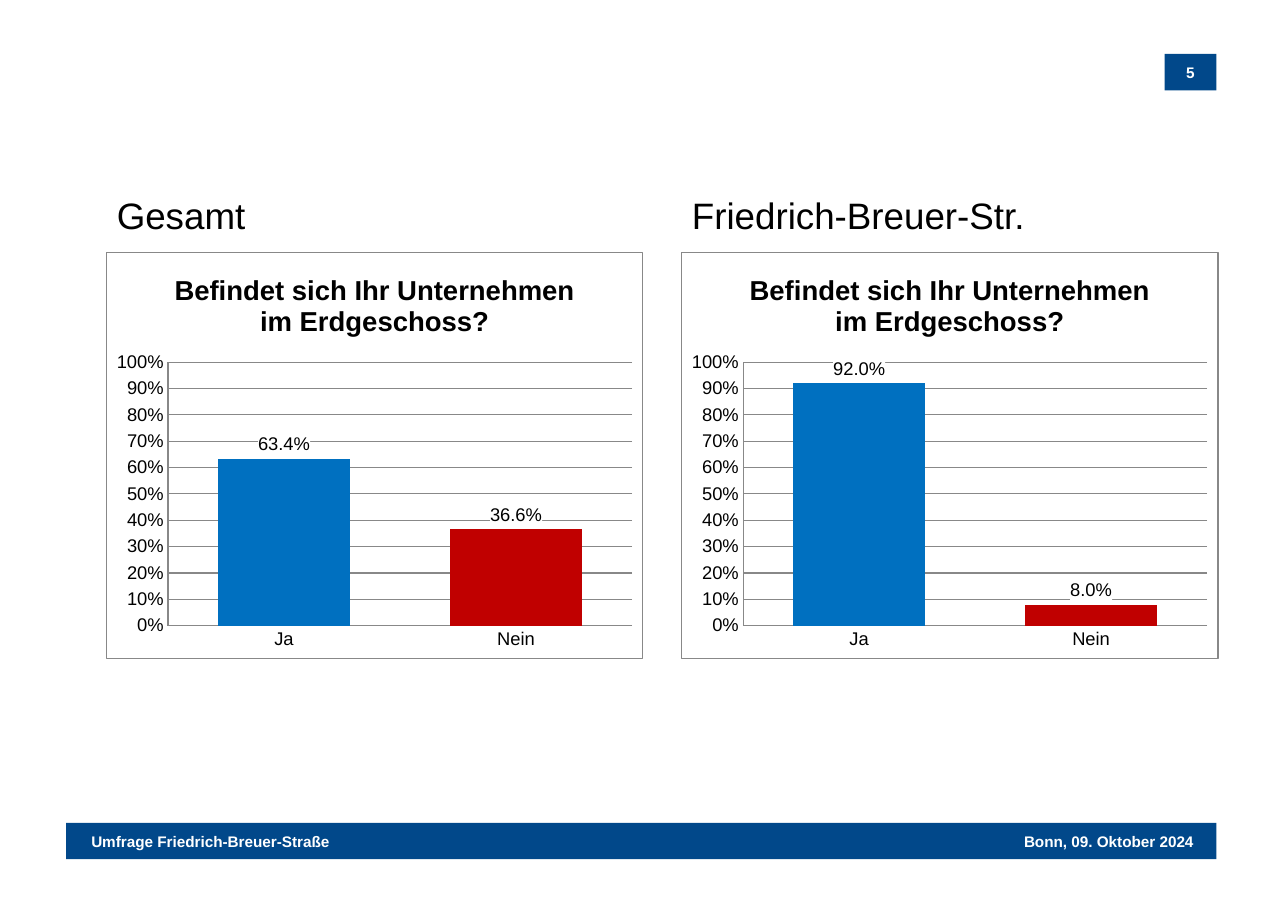
from dataclasses import dataclass

from lxml import etree
from pptx import Presentation
from pptx.chart.data import CategoryChartData
from pptx.dml.color import RGBColor
from pptx.enum.chart import XL_CHART_TYPE, XL_LABEL_POSITION, XL_TICK_MARK
from pptx.enum.shapes import MSO_SHAPE
from pptx.enum.text import MSO_ANCHOR, PP_ALIGN
from pptx.oxml import parse_xml
from pptx.oxml.ns import nsdecls, qn
from pptx.util import Inches, Pt

COLUMN = XL_CHART_TYPE.COLUMN_CLUSTERED
OUTSIDE_END = XL_LABEL_POSITION.OUTSIDE_END
NO_TICK = XL_TICK_MARK.NONE
RECTANGLE = MSO_SHAPE.RECTANGLE
MIDDLE = MSO_ANCHOR.MIDDLE
LEFT, CENTER, RIGHT = PP_ALIGN.LEFT, PP_ALIGN.CENTER, PP_ALIGN.RIGHT


@dataclass(frozen=True)
class Theme:
    font: str = "Arial"
    band: str = "01488A"
    paper: str = "FFFFFF"
    ink: str = "000000"
    line: str = "888888"
    yes: str = "0070C0"
    no: str = "C00000"
    heading: int = 24
    chart_title: int = 18
    label: int = 12
    small: int = 10
    rule: float = 0.75


T = Theme()
WIDTH, HEIGHT = 11.69, 8.27
MARGIN, BAND_RIGHT, BAND_H = 0.6, 11.04, 0.33
COL_LEFT, COL_STEP, COL_W = 0.96, 5.22, 4.88
HEAD_TOP, HEAD_H = 1.7, 0.5
CHART_TOP, CHART_H = 2.29, 3.69
QUESTION = "Befindet sich Ihr Unternehmen im Erdgeschoss?"
CATEGORIES = ("Ja", "Nein")
PANELS = (("Gesamt", (0.634, 0.366)), ("Friedrich-Breuer-Str.", (0.92, 0.08)))


def box(left, top, width, height):
    return [Inches(v) for v in (left, top, width, height)]


def style_font(font, size, color=T.ink, bold=False):
    font.name, font.size, font.bold = T.font, Pt(size), bold
    font.color.rgb = RGBColor.from_string(color)


def write(tf, text, size=T.small, color=T.paper, bold=True, align=LEFT, wrap=True):
    tf.word_wrap = wrap
    tf.vertical_anchor = MIDDLE
    p = tf.paragraphs[0]
    p.alignment = align
    p.space_before = Pt(0)
    r = p.add_run()
    r.text = text
    style_font(r.font, size, color, bold)


def add_band(s, left, top, width):
    sp = s.shapes.add_shape(RECTANGLE, *box(left, top, width, BAND_H))
    sp.shadow.inherit = False
    sp.fill.solid()
    sp.fill.fore_color.rgb = RGBColor.from_string(T.band)
    sp.line.fill.background()
    return sp


def add_footer_text(s, text, left, width, align):
    sp = s.shapes.add_textbox(*box(left, 7.5, width, 0.27))
    write(sp.text_frame, text, align=align, wrap=False)


def area_format(border=False):
    sppr = parse_xml(f"<c:spPr {nsdecls('c', 'a')}/>")

    def add_fill(parent, color):
        fill = etree.SubElement(parent, qn("a:solidFill"))
        etree.SubElement(fill, qn("a:srgbClr"), val=color)

    add_fill(sppr, T.paper)
    ln = etree.SubElement(sppr, qn("a:ln"), w=str(Pt(T.rule)))
    if border:
        add_fill(ln, T.line)
    else:
        etree.SubElement(ln, qn("a:noFill"))
    return sppr


def place_plot(plot_area, **shares):
    for old in plot_area.findall(qn("c:layout")):
        plot_area.remove(old)
    layout = parse_xml(f"<c:layout {nsdecls('c')}/>")
    manual = etree.SubElement(layout, qn("c:manualLayout"))
    settings = {"layoutTarget": "inner", "xMode": "edge", "yMode": "edge", **shares}
    for name, value in settings.items():
        etree.SubElement(manual, qn(f"c:{name}"), val=str(value))
    plot_area.insert(0, layout)


def style_line(line):
    line.color.rgb = RGBColor.from_string(T.line)
    line.width = Pt(T.rule)


def style_axis(axis):
    axis.major_tick_mark = axis.minor_tick_mark = NO_TICK
    style_font(axis.tick_labels.font, T.label)
    style_line(axis.format.line)


def add_share_chart(s, values, left):
    data = CategoryChartData(number_format="0.0%")
    data.categories = CATEGORIES
    data.add_series("Anteil", values)
    frame = s.shapes.add_chart(COLUMN, *box(left, CHART_TOP, COL_W, CHART_H), data)
    chart = frame.chart
    style_font(chart.font, T.small)
    chart.has_legend = False
    chart.has_title = True
    write(chart.chart_title.text_frame, QUESTION, size=T.chart_title, color=T.ink, align=CENTER)
    chart.chart_title.include_in_layout = False

    style_axis(chart.category_axis)
    axis = chart.value_axis
    style_axis(axis)
    axis.minimum_scale, axis.maximum_scale, axis.major_unit = 0, 1, 0.1
    axis.tick_labels.number_format = "0%"
    axis.tick_labels.number_format_is_linked = False
    axis.has_major_gridlines = True
    style_line(axis.major_gridlines.format.line)

    plot = chart.plots[0]
    plot.gap_width = 75
    plot.vary_by_categories = False
    series = plot.series[0]
    for i, color in enumerate((T.yes, T.no)):
        fill = series.points[i].format.fill
        fill.solid()
        fill.fore_color.rgb = RGBColor.from_string(color)

    labels = series.data_labels
    labels.show_value = True
    labels.number_format = "0.0%"
    labels.number_format_is_linked = False
    labels.position = OUTSIDE_END
    style_font(labels.font, T.label)
    label_text = series._element.find(qn("c:dLbls")).find(qn("c:txPr"))
    label_text.addprevious(area_format())

    chart_el = chart._chartSpace.find(qn("c:chart"))
    plot_area = chart_el.find(qn("c:plotArea"))
    chart_el.addnext(area_format(border=True))
    plot_area.append(area_format())
    place_plot(plot_area, x=0.115, y=0.27, w=0.865, h=0.65)


def main():
    prs = Presentation()
    prs.slide_width, prs.slide_height = Inches(WIDTH), Inches(HEIGHT)
    s = prs.slides.add_slide(prs.slide_layouts.get_by_name("Comparison"))
    holders = {sp.placeholder_format.idx: sp for sp in s.placeholders}
    headings = [holders.pop(1), holders.pop(3)]
    for sp in holders.values():
        sp._element.getparent().remove(sp._element)

    page = add_band(s, 10.57, 0.49, 0.47)
    write(page.text_frame, "5", align=CENTER)
    add_band(s, MARGIN, 7.47, BAND_RIGHT - MARGIN)
    add_footer_text(s, "Umfrage Friedrich-Breuer-Straße", 0.73, 2.39, LEFT)
    add_footer_text(s, "Bonn, 09. Oktober 2024", 9.18, 1.75, RIGHT)

    for col, (sp, (name, values)) in enumerate(zip(headings, PANELS)):
        left = COL_LEFT + col * COL_STEP
        sp.left, sp.top, sp.width, sp.height = box(left, HEAD_TOP, 3.54, HEAD_H)
        write(sp.text_frame, name, size=T.heading, color=T.ink, bold=False)
        add_share_chart(s, values, left)

    prs.save("out.pptx")


if __name__ == "__main__":
    main()
